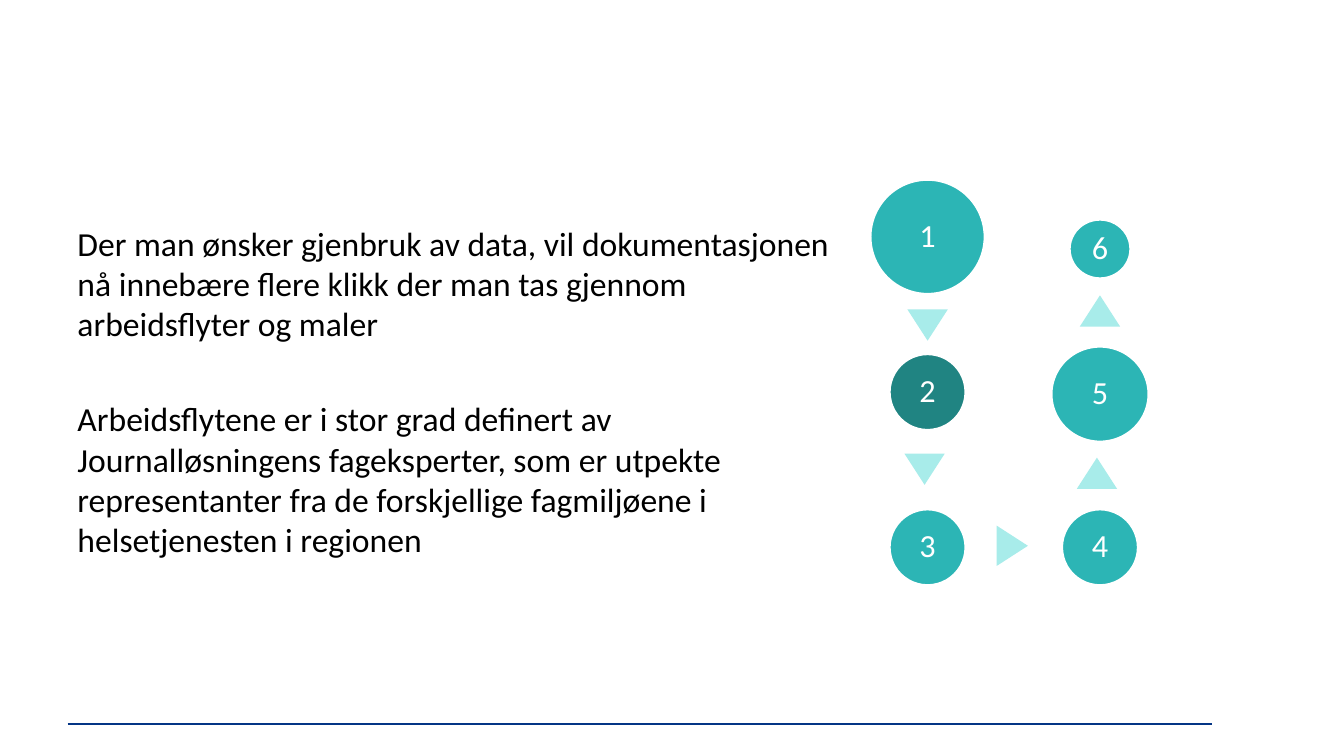
from pptx import Presentation
from pptx.dml.color import RGBColor
from pptx.enum.shapes import MSO_CONNECTOR, MSO_SHAPE
from pptx.enum.text import MSO_ANCHOR, PP_ALIGN
from pptx.oxml.ns import qn
from pptx.util import Inches, Pt
from lxml import etree


def colour(value):
    return RGBColor.from_string(value)


deck = Presentation()
deck.slide_width, deck.slide_height = Inches(13.33), Inches(7.5)
page = deck.slides.add_slide(deck.slide_layouts[6])

# Footer rule
rule = page.shapes.add_connector(
    MSO_CONNECTOR.STRAIGHT, Inches(0.67), Inches(7.18), Inches(12.02), Inches(7.18))
rule.line.color.rgb = colour("043585")
rule.line.width = Pt(1.25)
etree.SubElement(rule._element.spPr, qn("a:effectLst"))

# Body text
statements = [
    "Der man ønsker gjenbruk av data, vil dokumentasjonen nå innebære flere klikk "
    "der man tas gjennom arbeidsflyter og maler",
    "Arbeidsflytene er i stor grad definert av Journalløsningens fageksperter, som er "
    "utpekte representanter fra de forskjellige fagmiljøene i helsetjenesten i regionen",
]
box = page.shapes.add_textbox(Inches(0.67), Inches(2.16), Inches(7.65), Inches(3.46))
frame = box.text_frame
frame.word_wrap = True
frame.margin_right = Inches(0.05)
for index, statement in enumerate(statements):
    para = frame.add_paragraph() if index else frame.paragraphs[0]
    para.text = statement
    if index:
        para.space_before = Pt(39)
    para.font.size = Pt(24)
    para.font.name = "Calibri"
    para.font.color.rgb = colour("000000")

# Numbered steps: down the left column, up the right (centre x, centre y, width, height)
left_column, right_column = 9.2, 10.91
steps = [
    (left_column, 2.35, 1.14, 1.14),
    (left_column, 3.89, 0.76, 0.76),
    (left_column, 5.43, 0.76, 0.76),
    (right_column, 5.43, 0.76, 0.76),
    (right_column, 3.91, 0.97, 0.95),
    (right_column, 2.47, 0.61, 0.59),
]
for number, (x, y, width, height) in enumerate(steps, start=1):
    circle = page.shapes.add_shape(
        MSO_SHAPE.OVAL, Inches(x - width / 2), Inches(y - height / 2),
        Inches(width), Inches(height))
    circle.shadow.inherit = False
    circle.fill.solid()
    circle.fill.fore_color.rgb = colour("208482" if number == 2 else "2CB5B5")
    circle.line.color.rgb = colour("FFFFFF")
    circle.line.width = Pt(2)
    label = circle.text_frame
    label.margin_left = label.margin_right = Inches(0.03)
    label.margin_top = label.margin_bottom = Inches(0.03)
    label.vertical_anchor = MSO_ANCHOR.MIDDLE
    para = label.paragraphs[0]
    para.text = str(number)
    para.alignment = PP_ALIGN.CENTER
    para.line_spacing = 0.9
    para.font.size = Pt(23)
    para.font.name = "Calibri"
    para.font.color.rgb = colour("FFFFFF")

# Direction markers between the steps (left, top, rotation)
markers = [(9, 3.07, 180), (8.97, 4.5, 180), (9.84, 5.26, 90),
           (10.68, 4.54, 0), (10.71, 2.93, 0)]
for left, top, rotation in markers:
    marker = page.shapes.add_shape(
        MSO_SHAPE.ISOSCELES_TRIANGLE, Inches(left), Inches(top), Inches(0.4), Inches(0.31))
    marker.rotation = rotation
    marker.shadow.inherit = False
    marker.fill.solid()
    marker.fill.fore_color.rgb = colour("A8ECEA")
    marker.line.fill.background()

deck.save("out.pptx")
